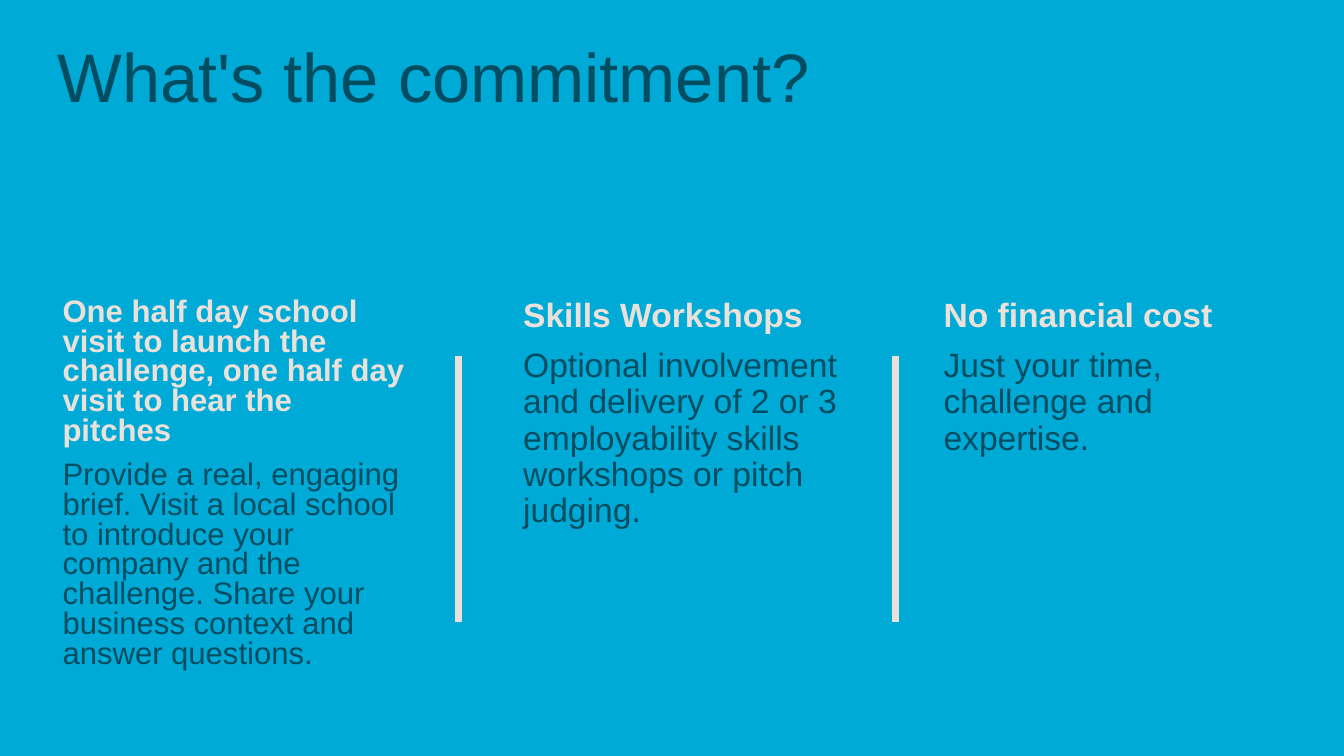
"""Build the slide that sets out the commitment in three columns."""
from dataclasses import dataclass

from pptx import Presentation
from pptx.dml.color import RGBColor
from pptx.enum import shapes, text
from pptx.oxml import parse_xml
from pptx.oxml.ns import nsdecls, qn
from pptx.util import Inches, Pt


@dataclass(frozen=True)
class Theme:
    font: str = "Arial"
    background: RGBColor = RGBColor(0x00, 0xAA, 0xD7)
    ink: RGBColor = RGBColor(0x00, 0x4D, 0x62)
    accent: RGBColor = RGBColor(0xEA, 0xE1, 0xDA)
    title_size: float = 49
    paragraph_gap: float = 10
    divider_width: float = 5


THEME = Theme()
HEADLINE = "What's the commitment?"
HEADLINE_BOX = (0.47, 0.27, 12.25, 0.93)
COLUMN_TOP, COLUMN_WIDTH = 2.91, 3.61
COLUMNS = [
    dict(
        heading="One half day school visit to launch the challenge, one half day visit to hear the pitches",
        detail="Provide a real, engaging brief. Visit a local school to introduce your company "
        "and the challenge. Share your business context and answer questions.",
        left=0.52, height=3.88, size=22.2, spacing=0.8,
    ),
    dict(
        heading="Skills Workshops",
        detail="Optional involvement and delivery of 2 or 3 employability skills workshops or pitch judging.",
        left=5.09, height=3.45, size=24, spacing=0.9,
    ),
    dict(
        heading="No financial cost",
        detail="Just your time, challenge and expertise.",
        left=9.26, height=2.64, size=24, spacing=0.9,
    ),
]
DIVIDER_LEFTS = (4.55, 8.88)
DIVIDER_TOP, DIVIDER_BOTTOM = 3.53, 6.17


def apply(target, values):
    for name, value in values.items():
        setattr(target, name, value)


def place(holder, box, anchor):
    apply(holder, dict(zip(("left", "top", "width", "height"), map(Inches, box))))
    apply(holder.text_frame, dict(word_wrap=True, auto_size=text.MSO_AUTO_SIZE.NONE, vertical_anchor=anchor))


def write(paragraph, words, size, colour, bold=False, spacing=1.0, before=0):
    paragraph.text = words
    properties = paragraph._p.get_or_add_pPr()
    properties.set("marL", "0")
    properties.set("indent", "0")
    properties.append(parse_xml(f"<a:buNone {nsdecls('a')}/>"))
    apply(paragraph, dict(alignment=text.PP_ALIGN.LEFT, line_spacing=spacing,
                          space_before=Pt(before), space_after=Pt(0)))
    run_font = paragraph.runs[0].font
    apply(run_font, dict(name=THEME.font, size=Pt(size), bold=bold))
    run_font.color.rgb = colour


def fill_column(holder, column):
    place(holder, (column["left"], COLUMN_TOP, COLUMN_WIDTH, column["height"]), text.MSO_ANCHOR.TOP)
    frame = holder.text_frame
    size, spacing = column["size"], column["spacing"]
    write(frame.paragraphs[0], column["heading"], size, THEME.accent, True, spacing)
    write(frame.add_paragraph(), column["detail"], size, THEME.ink, False, spacing, THEME.paragraph_gap)


def add_divider(slide, left):
    divider = slide.shapes.add_connector(
        shapes.MSO_CONNECTOR.STRAIGHT,
        *map(Inches, (left, DIVIDER_TOP, left, DIVIDER_BOTTOM)),
    )
    divider.line.color.rgb = THEME.accent
    divider.line.width = Pt(THEME.divider_width)
    divider._element.spPr.append(divider._element.makeelement(qn("a:effectLst"), {}))


def main():
    deck = Presentation()
    apply(deck, dict(slide_width=Inches(13.33), slide_height=Inches(7.5)))
    slide = deck.slides.add_slide(deck.slide_layouts[1])
    slide.background.fill.solid()
    slide.background.fill.fore_color.rgb = THEME.background

    headline, visits = slide.placeholders
    place(headline, HEADLINE_BOX, text.MSO_ANCHOR.BOTTOM)
    write(headline.text_frame.paragraphs[0], HEADLINE, THEME.title_size, THEME.ink)

    for left in DIVIDER_LEFTS:
        add_divider(slide, left)

    fill_column(visits, COLUMNS[0])
    for column in COLUMNS[1:]:
        fill_column(slide.shapes.add_textbox(0, 0, 0, 0), column)

    deck.save("out.pptx")


if __name__ == "__main__":
    main()
